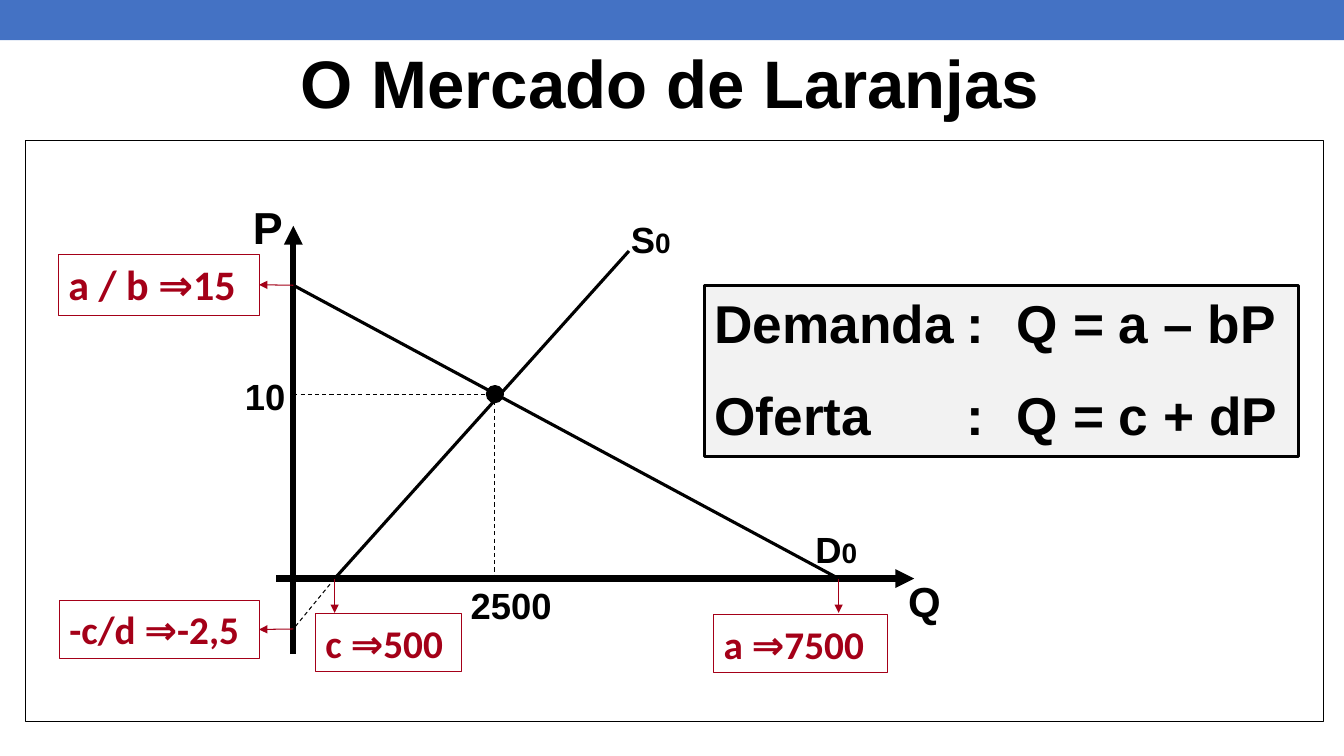
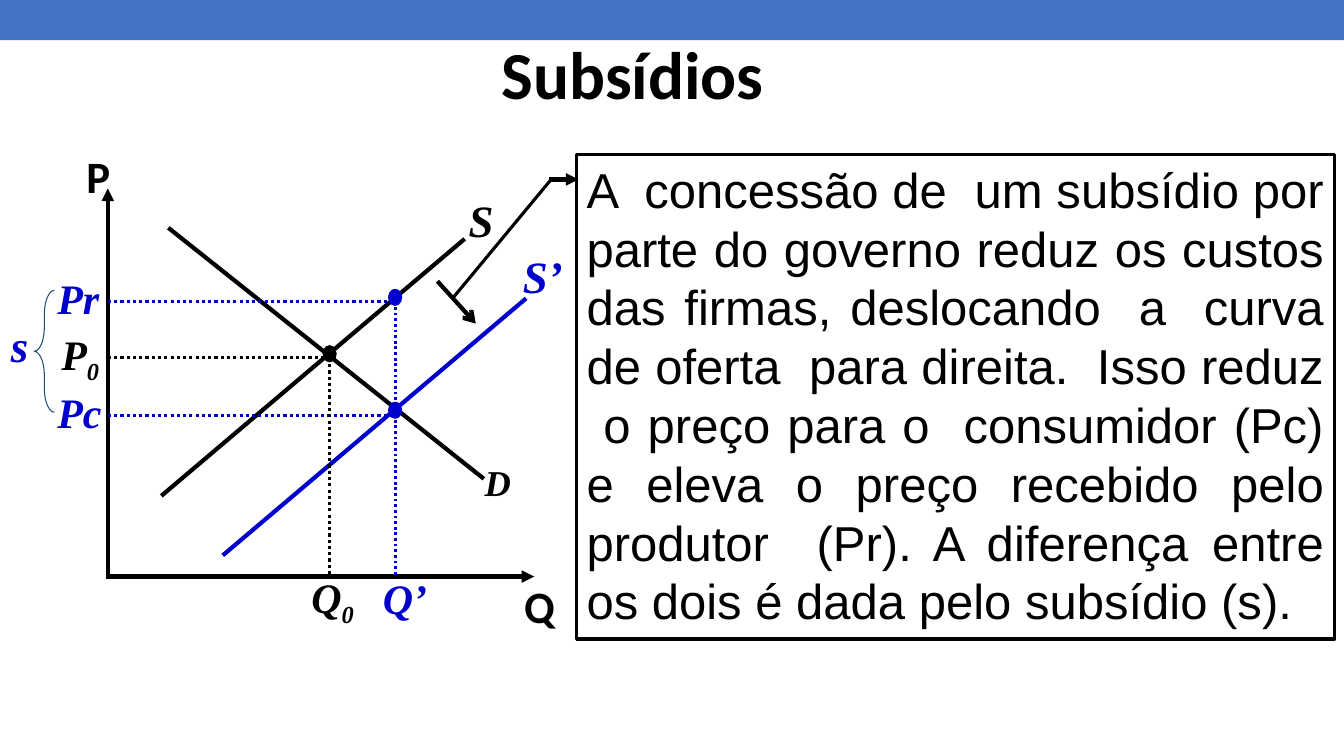
from lxml import etree
from pptx import Presentation
from pptx.dml.color import RGBColor
from pptx.enum.dml import MSO_LINE
from pptx.enum.shapes import MSO_CONNECTOR, MSO_SHAPE
from pptx.enum.text import MSO_ANCHOR, PP_ALIGN
from pptx.oxml.ns import qn
from pptx.util import Inches, Pt

RECT, OVAL, BRACE = MSO_SHAPE.RECTANGLE, MSO_SHAPE.OVAL, MSO_SHAPE.LEFT_BRACE
LINE, DASH, DOTS = MSO_CONNECTOR.STRAIGHT, MSO_LINE.DASH, MSO_LINE.ROUND_DOT
TOP, MIDDLE = MSO_ANCHOR.TOP, MSO_ANCHOR.MIDDLE
CENTER, JUSTIFY = PP_ALIGN.CENTER, PP_ALIGN.JUSTIFY
RIGHT_SIDE = 3
CELL = 0.1
SANS, HUMAN, SERIF = "Arial", "Calibri", "Times New Roman"
BLACK, WHITE, GREY = "000000", "FFFFFF", "F2F2F2"
BAND, RED, BLUE, NAVY = "4472C4", "A40018", "0000CC", "1F4E79"


def cells(*counts):
    """Turn counts of grid cells into lengths."""
    return [Inches(n * CELL) for n in counts]


def tint(color, value):
    """Give a colour format its hex value."""
    color.rgb = RGBColor.from_string(value)


def style(para, font, size, color=BLACK, bold=True, italic=False):
    """Set the font of a whole paragraph."""
    face = para.font
    face.name, face.size = font, Pt(size)
    face.bold, face.italic = bold, italic
    tint(face.color, color)


def tabs(para, *stops):
    """Add left tab stops to a paragraph."""
    group = etree.SubElement(para._p.get_or_add_pPr(), qn("a:tabLst"))
    for stop in cells(*stops):
        etree.SubElement(group, qn("a:tab"), pos=str(stop), algn="l")


class Pane:
    """A region of a slide whose parts are placed in cells from its corner."""

    def __init__(self, slide, box, font, wrap=True, italic=False):
        """Keep the region's box and the style of its labels."""
        self.shapes = slide.shapes
        self.left, self.top, self.wide, self.high = box
        self.font, self.wrap, self.italic = font, wrap, italic

    def shape(self, kind, x, y, w, h, fill=None, edge=None, weight=0.75):
        """Draw a preset shape."""
        item = self.shapes.add_shape(
            kind, *cells(self.left + x, self.top + y, w, h))
        item.shadow.inherit = False
        if fill:
            item.fill.solid()
            tint(item.fill.fore_color, fill)
        else:
            item.fill.background()
        if edge:
            tint(item.line.color, edge)
            item.line.width = Pt(weight)
        else:
            item.line.fill.background()
        item.text_frame.vertical_anchor = TOP
        return item

    def dot(self, x, y, w, h, color=BLACK):
        """Mark a point of the graph."""
        self.shape(OVAL, x - w / 2, y - h / 2, w, h, color, color)

    def line(self, start, end, weight, color=BLACK, dash=None, tip=None):
        """Draw a straight line, dashed or tipped on request."""
        (a, b), (c, d) = start, end
        item = self.shapes.add_connector(LINE, *cells(
            self.left + a, self.top + b, self.left + c, self.top + d))
        item.line.width = Pt(weight)
        tint(item.line.color, color)
        if dash:
            item.line.dash_style = dash
        if tip:
            etree.SubElement(item.line._get_or_add_ln(), qn("a:tailEnd"),
                             type=tip)
        etree.SubElement(item._element.spPr, qn("a:effectLst"))
        return item

    def label(self, x, y, w, text, size, color=BLACK, sub="", small=None,
              font=None, italic=None):
        """Write a label with an optional index after it."""
        high = (size * 1.2 / 72 + 0.1) / CELL
        item = self.shapes.add_textbox(
            *cells(self.left + x, self.top + y, w, high))
        item.text_frame.word_wrap = self.wrap
        para = item.text_frame.paragraphs[0]
        para.add_run().text = text
        slant = self.italic if italic is None else italic
        style(para, font or self.font, size, color, italic=slant)
        if sub:
            run = para.add_run()
            run.text = sub
            if small:
                run.font.size = Pt(small)
            else:
                run._r.get_or_add_rPr().set("baseline", "-25000")

    def tag(self, x, y, w, h, text, size=28):
        """Write a value in a red outlined box."""
        item = self.shape(RECT, x, y, w, h, edge=RED)
        para = item.text_frame.paragraphs[0]
        para.text, para.alignment = text, PP_ALIGN.LEFT
        style(para, HUMAN, size, RED)
        return item


def band(deck, slide):
    """Put the top band on the master, behind everything."""
    bar = Pane(slide, (0, 0, 133.33, 4), SANS).shape(
        RECT, 0, 0, 133.33, 4, BAND)
    deck.slide_master.element.cSld.spTree.insert(2, bar._element)


def title(slide, box, text, font):
    """Place and format the title."""
    item = slide.shapes.title
    item.left, item.top, item.width, item.height = cells(*box)
    item.text_frame.vertical_anchor = MIDDLE
    para = item.text_frame.paragraphs[0]
    para.text, para.alignment = text, CENTER
    style(para, font, 48)


def market(slide, box):
    """Draw the framed market graph with its intercepts."""
    pane = Pane(slide, box, SANS)
    pane.shape(RECT, 0, 0, pane.wide, pane.high, WHITE, BLACK)
    axis, base = 26.6, 43.5
    mid, price = 46.6, 25.2
    start, end = 30.7, 80.7
    high, low = 14.4, 48.5
    pane.line((axis, 51), (axis, 8.5), 4.5, tip="triangle")
    pane.line((24.9, base), (88.2, base), 4.5, tip="triangle")
    for a, b in (((axis, price), (mid, price)), ((mid, price), (mid, base)),
                 ((start, base), (axis, low))):
        pane.line(a, b, 0.75, dash=DASH)
    pane.line((start, base), (59.9, 11), 2.25)
    pane.line((axis, high), (end, base), 2.25)
    pane.dot(mid, price, 1.7, 1.7)

    pane.label(21.6, 5.4, 4.2, "P", 32)
    pane.label(86.6, 42.7, 10, "Q", 30)
    pane.label(20.8, 22.7, 7.5, "10", 26)
    pane.label(43.2, base, 11.9, "2500", 26)
    pane.label(59.1, 7.1, 7.2, "S", 26, sub="0", small=20)
    pane.label(77.4, 37.9, 7.5, "D", 26, sub="0", small=20)

    for y, spot, text, size in (
            (high, (3.3, 11.3, 19.9, 6.1), "a / b ⇒15", 30),
            (low, (3.4, 45.7, 19.8, 5.7), "-c/d ⇒-2,5", 28)):
        item = pane.tag(*spot, text, size)
        arrow = pane.line((axis, y), (23.2, y), 0.75, RED, tip="triangle")
        arrow.end_connect(item, RIGHT_SIDE)
    for x, spot, text in ((start, (28.8, 47, 14.5, 5.7), "c ⇒500"),
                          (end, (68.3, 47.1, 17.2, 5.7), "a ⇒7500")):
        pane.tag(*spot, text)
        pane.line((x, base), (x, 46.9), 0.75, RED, tip="triangle")


def rules(slide, box):
    """Write the demand and supply equations in a grey box."""
    pane = Pane(slide, box, SANS)
    item = pane.shape(RECT, 0, 0, pane.wide, pane.high, GREY, BLACK, 2.25)
    frame = item.text_frame
    rows = ("Demanda\t:\tQ = a – bP", "Oferta\t:\tQ = c + dP")
    for i, text in enumerate(rows):
        para = frame.add_paragraph() if i else frame.paragraphs[0]
        para.text, para.alignment = text, PP_ALIGN.LEFT
        if i:
            para.space_before = Pt(20)
        tabs(para, 25, 30)
        style(para, SANS, 38)


def shift(slide, box):
    """Draw the supply shift that a subsidy causes."""
    pane = Pane(slide, box, SERIF, wrap=False, italic=True)
    axis, base = 10.7, 43.2
    old, new = 32.7, 39.2
    paid, even, cost = 15.9, 21.5, 27.2
    pane.line((16, 35.2), (46.1, 9.7), 3)
    pane.line((16.7, 8.6), (48, 33.5), 3)
    pane.line((22.1, 41.1), (52.2, 15.6), 3, BLUE)
    pane.line((axis, base + 0.2), (axis, 4.7), 3, tip="triangle")
    pane.line((axis, base), (53, base), 3, tip="triangle")
    for x, y, color in ((old, even, BLACK), (new, paid, BLUE),
                        (new, cost, BLUE)):
        pane.line((axis, y), (x, y), 2.25, color, DOTS)
    pane.line((old, even), (old, base), 2.25, dash=DOTS)
    pane.line((new, paid), (new, base), 2, BLUE, DOTS)
    for x, y, color in ((old, 21.1, BLACK), (new, 26.7, BLUE),
                        (new, 15.5, BLUE)):
        pane.dot(x, y, 1.3, 1.6, color)

    pane.label(51, 42.9, 5.1, "Q", 32, font=HUMAN, italic=False)
    pane.label(7.6, 0.3, 4.4, "P", 32, font=HUMAN, italic=False)
    pane.label(47.1, 31.2, 4.6, "D", 26)
    pane.label(45.5, 4.6, 4.5, "S", 32)
    pane.label(50.9, 10.2, 6, "S’", 32, BLUE)
    pane.label(5.1, 18.1, 6, "P", 30, sub="0")
    pane.label(29.9, 42.2, 6.4, "Q", 30, sub="0")
    pane.label(37, 42.3, 6.4, "Q’", 30, BLUE)
    pane.label(4.7, 12.5, 6.2, "Pr", 30, BLUE)
    pane.label(4.7, 23.9, 6.5, "Pc", 30, BLUE)
    pane.label(0.1, 17, 3.8, "s", 32, BLUE)
    brace = pane.shape(BRACE, 3.4, 14.8, 2, 12.1, edge=NAVY)
    brace.adjustments[0] = 1.21

    pane.line((43.4, 13.9), (47.2, 18.1), 3, tip="arrow")
    pane.line((44.9, 15.6), (54.6, 3.9), 2.25)
    pane.line((54.5, 3.8), (57.4, 3.8), 3, tip="triangle")


def note(slide, box, text):
    """Write a justified note in an outlined box."""
    pane = Pane(slide, box, SANS)
    item = pane.shape(RECT, 0, 0, pane.wide, pane.high, edge=BLACK,
                      weight=2.25)
    para = item.text_frame.paragraphs[0]
    para.text, para.alignment = text, JUSTIFY
    style(para, SANS, 35, bold=False)


def main():
    """Build both slides and save them."""
    deck = Presentation()
    deck.slide_width, deck.slide_height = cells(133.33, 75)
    plain = deck.slide_layouts[5]

    slide = deck.slides.add_slide(plain)
    band(deck, slide)
    title(slide, (21.7, 2.2, 89.6, 11.7), "O Mercado de Laranjas", SANS)
    market(slide, (2.5, 13.9, 128.8, 57.7))
    rules(slide, (69.9, 28.3, 58.9, 17))

    slide = deck.slides.add_slide(plain)
    title(slide, (13.1, 1.4, 99.4, 11.7), "Subsídios", HUMAN)
    shift(slide, (0, 14, 57, 49))
    note(slide, (57.2, 15.3, 75.2, 48.1),
         "A  concessão de  um subsídio por parte do governo reduz os custos "
         "das firmas, deslocando  a  curva de oferta  para direita.  Isso "
         "reduz  o preço para o  consumidor (Pc) e eleva o preço recebido "
         "pelo produtor  (Pr). A diferença entre os dois é dada pelo "
         "subsídio (s).")
    deck.save("out.pptx")


if __name__ == "__main__":
    main()
